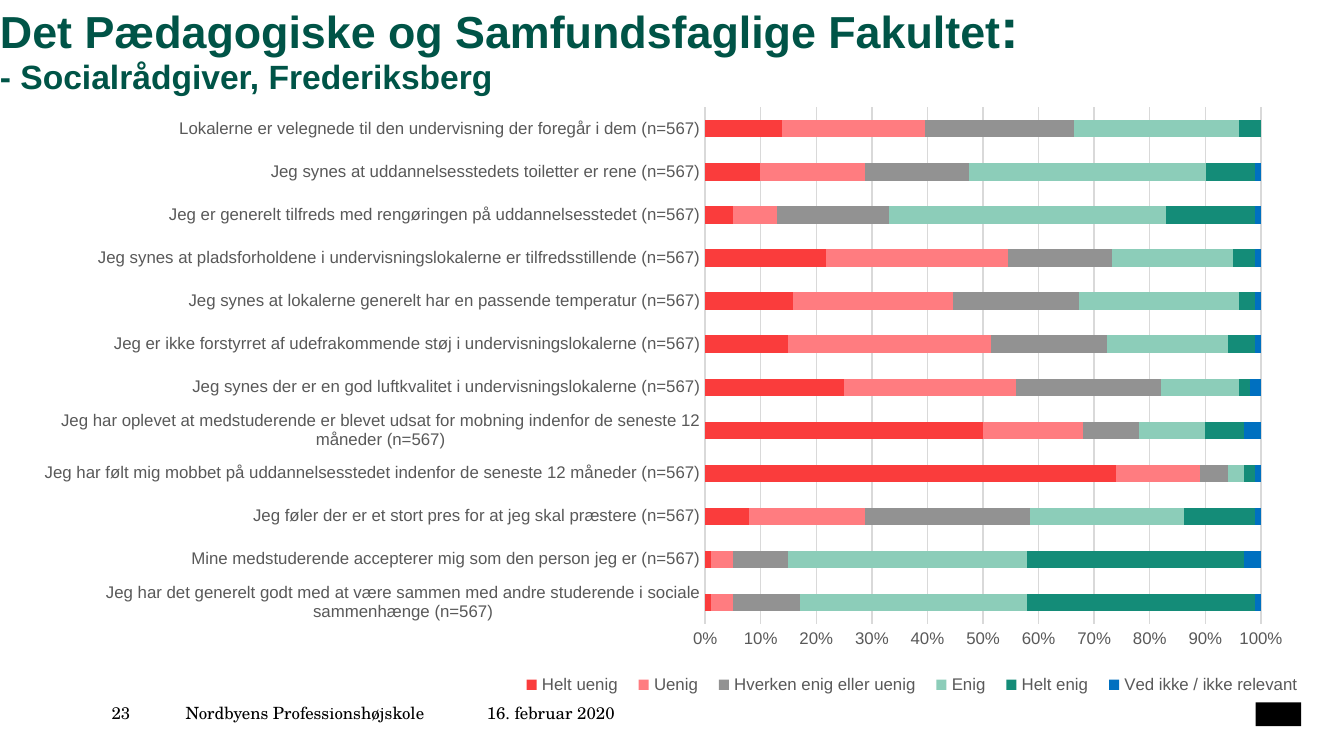
import lxml.etree
import pptx
import pptx.chart.data
import pptx.dml.color
import pptx.enum.chart
import pptx.enum.shapes
import pptx.enum.text
import pptx.oxml
import pptx.oxml.ns
import pptx.util

Cm = pptx.util.Cm
Pt = pptx.util.Pt
RGBColor = pptx.dml.color.RGBColor

GREEN = RGBColor(0x00, 0x54, 0x47)
BLACK = RGBColor(0x00, 0x00, 0x00)
LABEL_GREY = RGBColor(0x59, 0x59, 0x59)
GRID_GREY = RGBColor(0xD9, 0xD9, 0xD9)
STRONG_RED = RGBColor(0xFA, 0x3C, 0x3C)
LIGHT_RED = RGBColor(0xFF, 0x7C, 0x80)
NEUTRAL_GREY = RGBColor(0x92, 0x92, 0x92)
LIGHT_GREEN = RGBColor(0x8C, 0xCD, 0xB9)
STRONG_GREEN = RGBColor(0x14, 0x8C, 0x78)
BLUE = RGBColor(0x00, 0x70, 0xC0)

FOOTER_FORMAT = {"name": "TeX Gyre Schola", "size": Pt(9)}
TITLE_FORMAT = {"name": "Arial", "bold": True}
CHART_FORMAT = {"name": "Arial", "size": Pt(9)}

STATEMENTS = [
    "Jeg har det generelt godt med at være sammen med andre studerende i sociale sammenhænge",
    "Mine medstuderende accepterer mig som den person jeg er",
    "Jeg føler der er et stort pres for at jeg skal præstere",
    "Jeg har følt mig mobbet på uddannelsesstedet indenfor de seneste 12 måneder",
    "Jeg har oplevet at medstuderende er blevet udsat for mobning indenfor de seneste 12 måneder",
    "Jeg synes der er en god luftkvalitet i undervisningslokalerne",
    "Jeg er ikke forstyrret af udefrakommende støj i undervisningslokalerne",
    "Jeg synes at lokalerne generelt har en passende temperatur",
    "Jeg synes at pladsforholdene i undervisningslokalerne er tilfredsstillende",
    "Jeg er generelt tilfreds med rengøringen på uddannelsesstedet",
    "Jeg synes at uddannelsesstedets toiletter er rene",
    "Lokalerne er velegnede til den undervisning der foregår i dem",
]
ANSWERS = [
    ("Helt uenig", STRONG_RED, (1, 1, 8, 74, 50, 25, 15, 16, 22, 5, 10, 14)),
    ("Uenig", LIGHT_RED, (4, 4, 21, 15, 18, 31, 37, 29, 33, 8, 19, 26)),
    ("Hverken enig eller uenig", NEUTRAL_GREY, (12, 10, 30, 5, 10, 26, 21, 23, 19, 20, 19, 27)),
    ("Enig", LIGHT_GREEN, (41, 43, 28, 3, 12, 14, 22, 29, 22, 50, 43, 30)),
    ("Helt enig", STRONG_GREEN, (41, 39, 13, 2, 7, 2, 5, 3, 4, 16, 9, 4)),
    ("Ved ikke / ikke relevant", BLUE, (1, 3, 1, 1, 3, 2, 1, 1, 1, 1, 1, 0)),
]


def set_attributes(target, values):
    for name, value in values.items():
        setattr(target, name, value)


def set_font(font, values, color):
    set_attributes(font, values)
    font.color.rgb = color


def add_text_frame(slide, left, top, width, height):
    text_frame = slide.shapes.add_textbox(left, top, width, height).text_frame
    set_attributes(text_frame, {
        "margin_left": 0, "margin_top": 0, "margin_right": 0, "margin_bottom": 0,
        "word_wrap": True, "vertical_anchor": pptx.enum.text.MSO_ANCHOR.TOP,
    })
    return text_frame


def add_run(paragraph, text, values, color):
    run = paragraph.add_run()
    run.text = text
    set_font(run.font, values, color)


def add_title(slide, left, top, width, height):
    paragraph = add_text_frame(slide, left, top, width, height).paragraphs[0]
    paragraph.line_spacing = 0.9
    add_run(paragraph, "Det Pædagogiske og Samfundsfaglige Fakultet",
            {**TITLE_FORMAT, "size": Pt(24)}, GREEN)
    add_run(paragraph, ":", {**TITLE_FORMAT, "size": Pt(30)}, GREEN)
    paragraph.add_line_break()
    add_run(paragraph, "- Socialrådgiver, Frederiksberg",
            {**TITLE_FORMAT, "size": Pt(18)}, GREEN)


def set_layout(parent, index, fractions, inner=False):
    qn = pptx.oxml.ns.qn
    for existing in parent.findall(qn("c:layout")):
        parent.remove(existing)
    layout = pptx.oxml.parse_xml(
        f"<c:layout {pptx.oxml.ns.nsdecls('c')}><c:manualLayout/></c:layout>")
    settings = {"layoutTarget": "inner"} if inner else {}
    settings.update(xMode="edge", yMode="edge", **fractions)
    for name, value in settings.items():
        lxml.etree.SubElement(layout[0], qn(f"c:{name}")).set("val", str(value))
    parent.insert(index, layout)


def add_answer_chart(slide, left, top, width, height):
    chart_data = pptx.chart.data.CategoryChartData(number_format="0")
    chart_data.categories = [f"{statement} (n=567)" for statement in STATEMENTS]
    for name, color, values in ANSWERS:
        chart_data.add_series(name, values)
    chart = slide.shapes.add_chart(
        pptx.enum.chart.XL_CHART_TYPE.BAR_STACKED_100,
        left, top, width, height, chart_data).chart
    set_font(chart.font, CHART_FORMAT, LABEL_GREY)
    set_attributes(chart, {"has_title": False, "has_legend": True})

    plot = chart.plots[0]
    set_attributes(plot, {"gap_width": 150, "overlap": 100, "vary_by_categories": False})
    for series, (name, color, values) in zip(plot.series, ANSWERS):
        series.format.fill.solid()
        series.format.fill.fore_color.rgb = color

    no_tick = pptx.enum.chart.XL_TICK_MARK.NONE
    for axis in (chart.category_axis, chart.value_axis):
        set_attributes(axis, {"major_tick_mark": no_tick, "minor_tick_mark": no_tick})
        set_font(axis.tick_labels.font, CHART_FORMAT, LABEL_GREY)
        axis.format.line.fill.background()
    set_attributes(chart.value_axis, {
        "minimum_scale": 0, "maximum_scale": 1, "major_unit": 0.1,
        "has_major_gridlines": True})
    set_attributes(chart.value_axis.tick_labels,
                   {"number_format": "0%", "number_format_is_linked": False})
    grid_line = chart.value_axis.major_gridlines.format.line
    grid_line.color.rgb = GRID_GREY
    grid_line.width = Pt(0.75)

    legend = chart.legend
    set_attributes(legend, {"position": pptx.enum.chart.XL_LEGEND_POSITION.BOTTOM,
                            "include_in_layout": False})
    set_font(legend.font, CHART_FORMAT, LABEL_GREY)
    set_layout(legend._element, 1, {"x": 0.38, "y": 0.94, "w": 0.62, "h": 0.06})
    plot_area = chart._chartSpace.chart.plotArea
    set_layout(plot_area, 0, {"x": 0.53, "y": 0.02, "w": 0.43, "h": 0.85}, inner=True)


def add_footer(slide, left, top, width, height):
    fields = [
        ("23", 0, Cm(1.17)),
        ("Nordbyens Professionshøjskole", Cm(1.4), Cm(5.28)),
        ("16. februar 2020", Cm(7.09), Cm(7.11)),
    ]
    for text, offset, field_width in fields:
        text_frame = add_text_frame(slide, left + offset, top, field_width, height)
        add_run(text_frame.paragraphs[0], text, FOOTER_FORMAT, BLACK)
    mark_width = Cm(0.86)
    mark = slide.shapes.add_shape(
        pptx.enum.shapes.MSO_SHAPE.RECTANGLE,
        left + width - mark_width, top, mark_width, Cm(0.45))
    mark.shadow.inherit = False
    mark.fill.solid()
    mark.fill.fore_color.rgb = BLACK
    mark.line.fill.background()


def main():
    presentation = pptx.Presentation()
    set_attributes(presentation, {"slide_width": Cm(25.4), "slide_height": Cm(14.28)})
    slide = presentation.slides.add_slide(presentation.slide_layouts[6])
    add_title(slide, 0, 0, Cm(20.8), Cm(2.18))
    add_answer_chart(slide, Cm(0.38), Cm(1.8), Cm(24.43), Cm(11.48))
    add_footer(slide, Cm(2.11), Cm(13.27), Cm(22.48), Cm(0.38))
    presentation.save("out.pptx")


if __name__ == "__main__":
    main()
